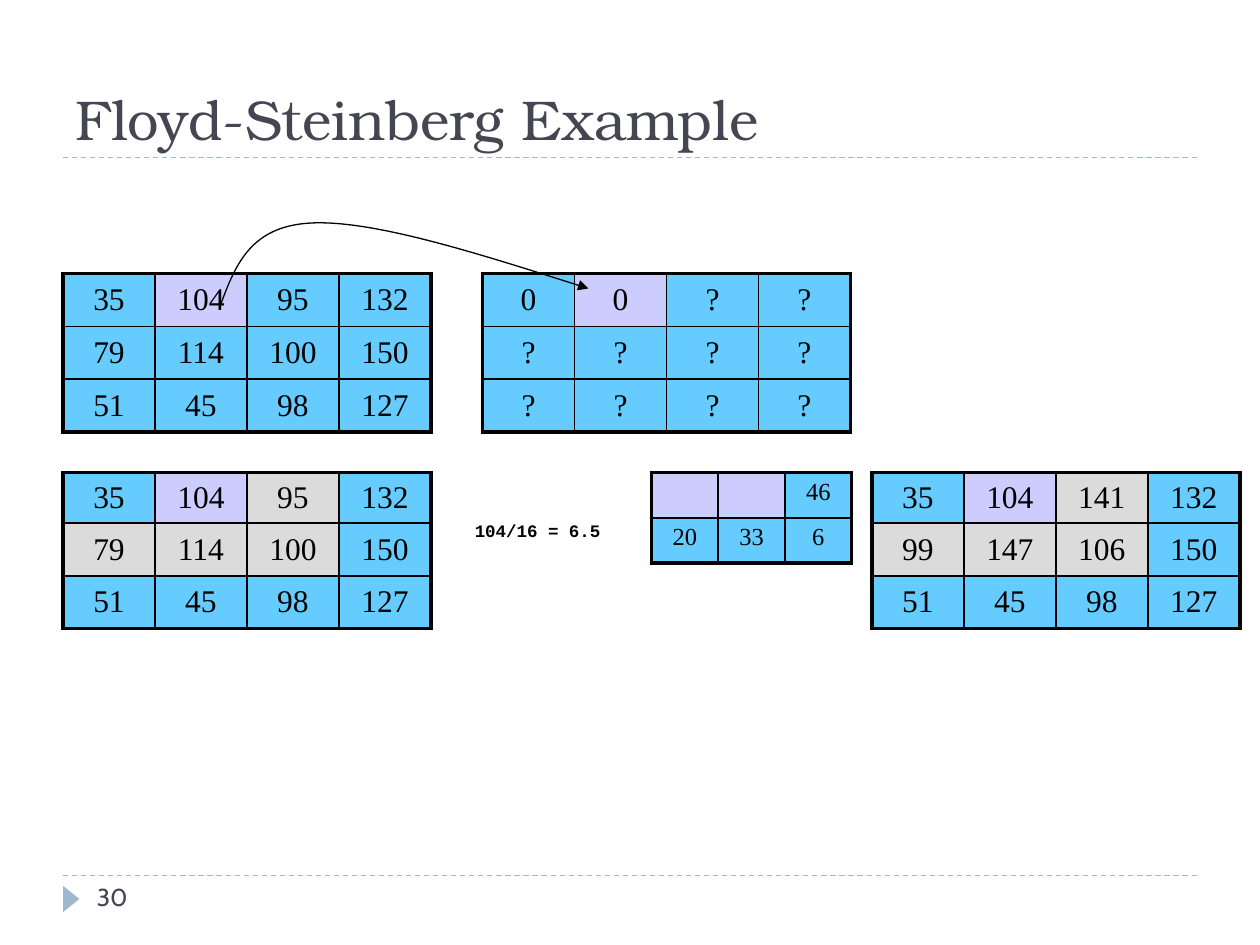
from lxml.etree import SubElement
from pptx import Presentation
from pptx.dml.color import RGBColor
from pptx.enum.dml import MSO_LINE_DASH_STYLE as Dash
from pptx.enum.shapes import MSO_CONNECTOR as Connector, MSO_SHAPE as Shape
from pptx.enum.text import MSO_ANCHOR as Anchor, PP_ALIGN as Align
from pptx.oxml.ns import qn
from pptx.util import Inches, Pt

COLORS = {
    "ink": "000000", "text": "464653", "accent": "9FB8CD",
    "plain": "66CCFF", "done": "CCCCFF", "changed": "DBDBDB",
}
TITLE_FONT, NUMBER_FONT = "TeX Gyre Bonum", "Cabin"
CELL_FONT, CODE_FONT = "Times New Roman", "Courier New"

# Cell fills by (row, column); every other cell is plain
CURRENT = {(0, 1): "done"}
NEIGHBOURS = CURRENT | {cell: "changed" for cell in [(0, 2), (1, 0), (1, 1), (1, 2)]}
IMAGE = [[35, 104, 95, 132], [79, 114, 100, 150], [51, 45, 98, 127]]
OUTPUT = [[0, 0, "?", "?"], ["?"] * 4, ["?"] * 4]
UPDATED = [[35, 104, 141, 132], [99, 147, 106, 150], [51, 45, 98, 127]]
ERRORS = [["", "", 46], [20, 33, 6]]

PIXEL = {"column": 0.73, "size": 18, "anchor": Anchor.MIDDLE}
UPPER = PIXEL | {"top": 2.17, "rows": [0.42, 0.42, 0.42], "fills": CURRENT}
LOWER = PIXEL | {"top": 3.75, "rows": [0.4, 0.42, 0.42], "fills": NEIGHBOURS}
TABLES = [
    UPPER | {"left": 3.83, "values": OUTPUT},
    UPPER | {"left": 0.5, "values": IMAGE},
    LOWER | {"left": 0.5, "values": IMAGE},
    LOWER | {"left": 6.92, "values": UPDATED},
    {"left": 5.17, "top": 3.75, "column": 0.53, "rows": [0.36, 0.36], "size": 14,
     "anchor": Anchor.TOP, "values": ERRORS, "fills": {(0, 0): "done", (0, 1): "done"}},
]
# Start point, then two cubic segments of three points each
ARROW = [(1.75, 2.42), (1.87, 2.1), (1.99, 1.79), (2.48, 1.77),
         (2.97, 1.75), (3.82, 2.02), (4.67, 2.29)]
RULES = [6.95, 1.25]


def color(name):
    return RGBColor.from_string(COLORS[name])


def add_run(paragraph, text, font, size, color_name, bold=False):
    run = paragraph.add_run()
    run.text = text
    run.font.name, run.font.size, run.font.bold = font, Pt(size), bold
    run.font.color.rgb = color(color_name)


def space_before(paragraph, percent):
    spacing = SubElement(paragraph._p.get_or_add_pPr(), qn("a:spcBef"))
    SubElement(spacing, qn("a:spcPct"), val=str(percent * 1000))


def add_text(slide, box, text, font, size, color_name, anchor=Anchor.TOP, bold=False):
    frame = slide.shapes.add_textbox(*map(Inches, box)).text_frame
    frame.word_wrap = True
    frame.vertical_anchor = anchor
    add_run(frame.paragraphs[0], text, font, size, color_name, bold)
    return frame.paragraphs[0]


def add_border(cell, side, width):
    line = SubElement(cell._tc.get_or_add_tcPr(), qn(f"a:ln{side}"), w=str(Pt(width)))
    fill = SubElement(line, qn("a:solidFill"))
    SubElement(fill, qn("a:srgbClr"), val=COLORS["ink"])


def add_grid(slide, left, top, column, rows, size, anchor, values, fills):
    row_count, column_count = len(values), len(values[0])
    table = slide.shapes.add_table(
        row_count, column_count, Inches(left), Inches(top),
        Inches(column * column_count), Inches(sum(rows))).table
    table.first_row = table.horz_banding = False
    for table_column in table.columns:
        table_column.width = Inches(column)
    for r, row in enumerate(values):
        table.rows[r].height = Inches(rows[r])
        for c, value in enumerate(row):
            cell = table.cell(r, c)
            outer = {"L": c == 0, "R": c == column_count - 1,
                     "T": r == 0, "B": r == row_count - 1}
            for side, is_outer in outer.items():
                add_border(cell, side, 2.25 if is_outer else 1)
            cell.fill.solid()
            cell.fill.fore_color.rgb = color(fills.get((r, c), "plain"))
            cell.vertical_anchor = anchor
            paragraph = cell.text_frame.paragraphs[0]
            paragraph.alignment = Align.CENTER
            space_before(paragraph, 20)
            if value == "":
                SubElement(paragraph._p, qn("a:endParaRPr"), sz=str(size * 100))
            else:
                add_run(paragraph, str(value), CELL_FONT, size, "ink")


def add_curved_arrow(slide, points):
    start, *others = [(Inches(x), Inches(y)) for x, y in points]
    builder = slide.shapes.build_freeform(*start)
    builder.add_line_segments(others, close=False)
    arrow = builder.convert_to_shape()
    arrow.shadow.inherit = False
    arrow.fill.background()
    arrow.line.color.rgb = color("ink")
    arrow.line.width = Pt(0.75)
    SubElement(arrow.line._get_or_add_ln(), qn("a:tailEnd"), type="triangle")
    # Turn each three straight segments into one cubic curve
    outline = next(arrow._element.iter(qn("a:path" )))
    segments = outline.findall(qn("a:lnTo"))
    for first in range(0, len(segments), 3):
        curve = SubElement(outline, qn("a:cubicBezTo"))
        for segment in segments[first:first + 3]:
            curve.append(segment[0])
            outline.remove(segment)


def main():
    presentation = Presentation()
    presentation.slide_width, presentation.slide_height = Inches(10), Inches(7.5)
    slide = presentation.slides.add_slide(presentation.slide_layouts[6])

    # Dashed rules and page marker
    for y in RULES:
        rule = slide.shapes.add_connector(
            Connector.STRAIGHT, Inches(0.5), Inches(y), Inches(9.5), Inches(y))
        rule.line.color.rgb = color("accent")
        rule.line.width = Pt(0.75)
        rule.line.dash_style = Dash.DASH
        SubElement(rule._element.spPr, qn("a:effectLst"))
    marker = slide.shapes.add_shape(
        Shape.ISOSCELES_TRIANGLE, Inches(0.46), Inches(7.07), Inches(0.21), Inches(0.13))
    marker.rotation = 90
    marker.shadow.inherit = False
    marker.fill.solid()
    marker.fill.fore_color.rgb = color("accent")
    marker.line.fill.background()

    # Page number and title
    add_text(slide, (0.67, 6.95, 2.17, 0.4), "30", NUMBER_FONT, 14, "text")
    add_text(slide, (0.5, 0.25, 9, 1), "Floyd-Steinberg Example",
             TITLE_FONT, 32, "text", Anchor.BOTTOM)

    # Pixel grids, with the arrow and the error calculation
    for grid in TABLES:
        add_grid(slide, **grid)
    add_curved_arrow(slide, ARROW)
    calculation = add_text(slide, (3.67, 4.08, 1.58, 0.27), "104/16 = 6.5",
                           CODE_FONT, 10, "ink", bold=True)
    space_before(calculation, 50)

    presentation.save("out.pptx")


if __name__ == "__main__":
    main()
